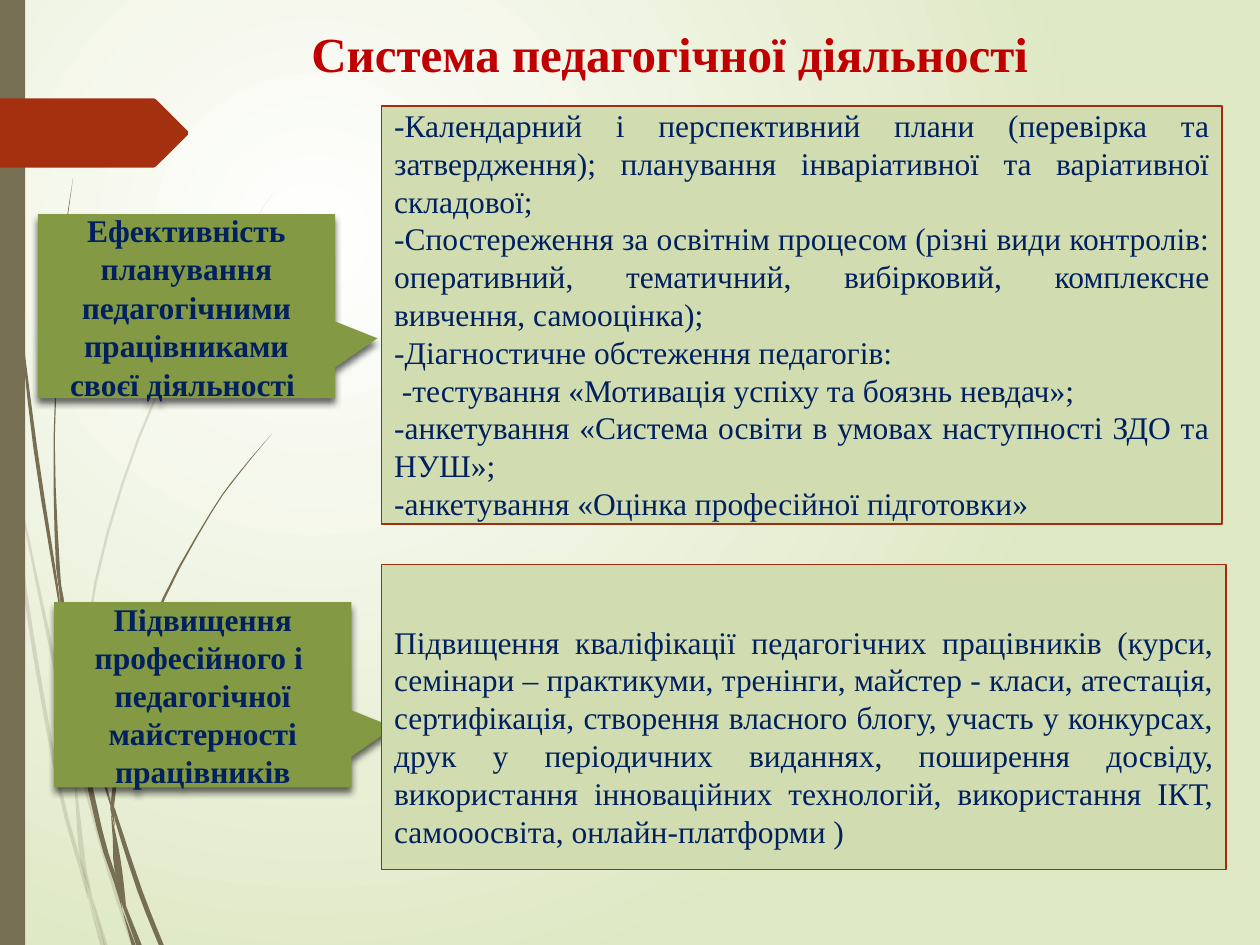
from lxml import etree
from pptx import Presentation, util as u
from pptx.dml.color import RGBColor
from pptx.enum import shapes, text
from pptx.oxml.ns import qn

FONT = "Times New Roman"
BROWN, RUST, GREEN, PALE, NAVY = "766F54", "A53010", "839943", "D1DDB0", "002060"
CENTER, JUSTIFY = text.PP_ALIGN.CENTER, text.PP_ALIGN.JUSTIFY

TITLE = "Система педагогічної діяльності"

# Rows: callout box and text, then detail box, top inset and paragraphs
ROWS = [
    dict(call_at=(0.3, 1.7, 2.36, 1.46), spacing=u.Pt(22),
         call="Ефективність планування педагогічними працівниками своєї діяльності ",
         box_at=(3.03, 0.84, 6.67, 3.32), inset=0.03,
         box=["-Календарний і перспективний плани (перевірка та затвердження); "
              "планування інваріативної та варіативної складової;",
              "-Спостереження за освітнім процесом (різні види контролів: оперативний, "
              "тематичний, вибірковий, комплексне вивчення, самооцінка);",
              "-Діагностичне обстеження педагогів:",
              " -тестування «Мотивація успіху та боязнь невдач»;",
              "-анкетування «Система освіти в умовах наступності ЗДО та НУШ»;",
              "-анкетування «Оцінка професійної підготовки»"]),
    dict(call_at=(0.43, 4.78, 2.36, 1.47), spacing=1.0,
         call="Підвищення професійного і  педагогічної майстерності працівників",
         box_at=(3.03, 4.48, 6.7, 2.42), inset=0.35,
         box=["Підвищення кваліфікації педагогічних працівників (курси, семінари – практикуми, "
              "тренінги, майстер - класи, атестація, сертифікація, створення власного блогу, "
              "участь у конкурсах, друк у періодичних виданнях, поширення досвіду, використання "
              "інноваційних технологій, використання ІКТ, самооосвіта, онлайн-платформи )"]),
]

# Grass pieces: (x, y, width) along the middle of each piece
LIGHT_GRASS = [
    [(0, 2.9, .02), (.06, 3.33, .02), (.08, 3.5, 0)],
    [(.1, 3.45, 0), (.12, 3.76, .01), (.42, 5.21, .03), (.59, 5.95, .02)],
    [(.61, 5.98, 0), (.63, 6.08, .02), (.87, 6.93, .03), (1.06, 7.5, .04)],
    [(.73, 7.11, 0), (.84, 7.5, .03)],
    [(.08, 3.5, 0), (.2, 4.7, .03), (.46, 6.2, .03), (.64, 6.88, .03), (.7, 7.14, 0)],
    [(.58, 5.99, 0), (.62, 6.46, .03), (.66, 6.85, .04), (.73, 7.11, 0)],
    [(2.17, 1.53, 0), (1.87, 1.98, .01), (1.58, 2.45, .02), (1.1, 3.48, .02),
     (.76, 4.62, .02), (.6, 5.84, .02), (.61, 5.96, 0)],
    [(.7, 7.14, 0), (.81, 7.5, .03)],
    [(.59, 5.86, 0), (.6, 5.98, .03), (.61, 6.1, 0)],
    [(.65, 6.83, 0), (.7, 7.07, .03), (.83, 7.5, .01)],
]
DARK_GRASS = [
    [(.02, 0, .01), (.05, 1.1, .01), (.14, 2.33, .01), (.28, 3.55, .03),
     (.45, 4.64, .02), (.47, 4.81, 0)],
    [(.5, 4.72, 0), (.54, 5.05, .03), (.75, 5.91, .04), (.88, 6.39, .01)],
    [(.91, 6.41, 0), (.93, 6.52, .03), (1.11, 7.07, .04), (1.28, 7.5, .04)],
    [(.47, 4.77, 0), (.58, 5.57, .04), (.79, 6.58, .04), (.92, 7, .03), (.97, 7.22, 0)],
    [(.58, 1.41, 0), (.51, 1.93, .01), (.48, 2.45, .01), (.43, 3.49, .01),
     (.46, 4.5, .03), (.5, 4.72, 0)],
    [(1, 7.19, 0), (1.11, 7.5, .03)],
    [(.45, 4.49, 0), (.49, 4.75, .03), (.53, 5.05, 0)],
    [(2.16, 3.44, 0), (1.91, 3.74, .01), (1.68, 4.06, .01), (1.3, 4.75, .02),
     (1.02, 5.52, .02), (.9, 6.32, .03), (.91, 6.41, 0)],
    [(.97, 7.22, 0), (1.06, 7.5, .03)],
    [(.88, 6.45, 0), (.91, 6.65, .03), (.94, 6.91, .06), (1, 7.19, 0)],
    [(.88, 6.31, 0), (.89, 6.42, .03), (.91, 6.56, 0)],
    [(.91, 6.91, 0), (.96, 7.11, .03), (1.09, 7.5, .02)],
]
TAG = [(0, .78), (1.22, .78), (1.24, .79), (1.49, 1.04), (1.49, 1.07),
       (1.24, 1.32), (1.22, 1.33), (0, 1.33)]


def rgb(value):
    return RGBColor.from_string(value)


def sub(parent, tag, **attrs):
    return etree.SubElement(parent, qn(tag), {k: str(v) for k, v in attrs.items()})


def paint(sp, fill, line=None, alpha=None):
    sp.shadow.inherit = False
    sp.fill.solid()
    sp.fill.fore_color.rgb = rgb(fill)
    if alpha:
        clr = sp._element.spPr.find(qn("a:solidFill")).find(qn("a:srgbClr"))
        sub(clr, "a:alpha", val=alpha * 1000)
    if line:
        sp.line.color.rgb = rgb(line)
        sp.line.width = u.Pt(0.75)
    else:
        sp.line.fill.background()


def add_shape(kind, at, fill, line=None):
    sp = s.shapes.add_shape(kind, *map(u.Inches, at))
    paint(sp, fill, line)
    return sp


def polygon(points, fill, alpha=None):
    pts = [(round(x * 1000), round(y * 1000)) for x, y in points]
    fb = s.shapes.build_freeform(*pts[0], scale=u.Inches(1) / 1000)
    fb.add_line_segments(pts[1:], close=True)
    paint(fb.convert_to_shape(), fill, alpha=alpha)


def smooth(nodes, steps=3):
    """Catmull-Rom curve through the nodes."""
    ext = [nodes[0], *nodes, nodes[-1]]
    curve = []
    for a, b, c, d in zip(ext, ext[1:], ext[2:], ext[3:]):
        for t in (i / steps for i in range(steps)):
            curve.append([(2 * q + (r - p) * t + (2 * p - 5 * q + 4 * r - w) * t ** 2
                           + (3 * q - p - 3 * r + w) * t ** 3) / 2
                          for p, q, r, w in zip(a, b, c, d)])
    return curve + [nodes[-1]]


def blade(nodes, alpha=None):
    curve = smooth(nodes) if len(nodes) > 3 else nodes
    left = [(x - w / 2, y) for x, y, w in curve]
    right = [(x + w / 2, y) for x, y, w in curve]
    polygon(left + right[::-1], BROWN, alpha)


def write(sp, lines, align, size=18, color=NAVY, bold=False, spacing=1.0,
          anchor=text.MSO_ANCHOR.MIDDLE, inset=0.05):
    tf = sp.text_frame
    frame = dict(word_wrap=True, vertical_anchor=anchor, margin_top=u.Inches(inset))
    for key, value in frame.items():
        setattr(tf, key, value)
    for i, line in enumerate(lines):
        p = tf.add_paragraph() if i else tf.paragraphs[0]
        p.alignment, p.line_spacing = align, spacing
        r = p.add_run()
        r.text = line
        for key, value in dict(name=FONT, size=u.Pt(size), bold=bold).items():
            setattr(r.font, key, value)
        r.font.color.rgb = rgb(color)


prs = Presentation()
prs.slide_width, prs.slide_height = u.Inches(10), u.Inches(7.5)
s = prs.slides.add_slide(prs.slide_layouts[6])

# Radial background
bg = s.background.fill
bg.gradient()
for stop, color in zip(bg.gradient_stops, ("FFFFFF", "DFE8C4")):
    stop.color.rgb = rgb(color)
grad = s._element.find(".//" + qn("a:gradFill"))
grad.remove(grad.find(qn("a:lin")))
focus = sub(grad, "a:path", path="circle")
sub(focus, "a:fillToRect", l=50000, t=50000, r=100000, b=100000)

# Grass, side bar and tag
for nodes in LIGHT_GRASS:
    blade(nodes, alpha=20)
for nodes in DARK_GRASS:
    blade(nodes)
add_shape(shapes.MSO_SHAPE.RECTANGLE, (0, 0, 0.2, 7.5), BROWN)
polygon(TAG, RUST)

# Callouts with their detail boxes, the title between the rows
for i, row in enumerate(ROWS):
    if i == 1:
        title = s.shapes.add_textbox(*map(u.Inches, (1.77, 0.23, 7.09, 0.48)))
        write(title, [TITLE], CENTER, size=28, color="C00000", bold=True, spacing=0.8,
              anchor=text.MSO_ANCHOR.TOP)
    call = add_shape(shapes.MSO_SHAPE.RECTANGULAR_CALLOUT, row["call_at"], GREEN)
    call.adjustments[0], call.adjustments[1] = 0.642, 0.175
    shadow = sub(call._element.spPr.find(qn("a:effectLst")), "a:outerShdw",
                 blurRad=u.Pt(4), dist=u.Pt(3), dir=90 * 60000, rotWithShape=0)
    sub(sub(shadow, "a:srgbClr", val="000000"), "a:alpha", val=60000)
    write(call, [row["call"]], CENTER, bold=True, spacing=row["spacing"])
    box = add_shape(shapes.MSO_SHAPE.RECTANGLE, row["box_at"], PALE, "9E2E0F")
    write(box, row["box"], JUSTIFY, inset=row["inset"])

prs.save("out.pptx")
